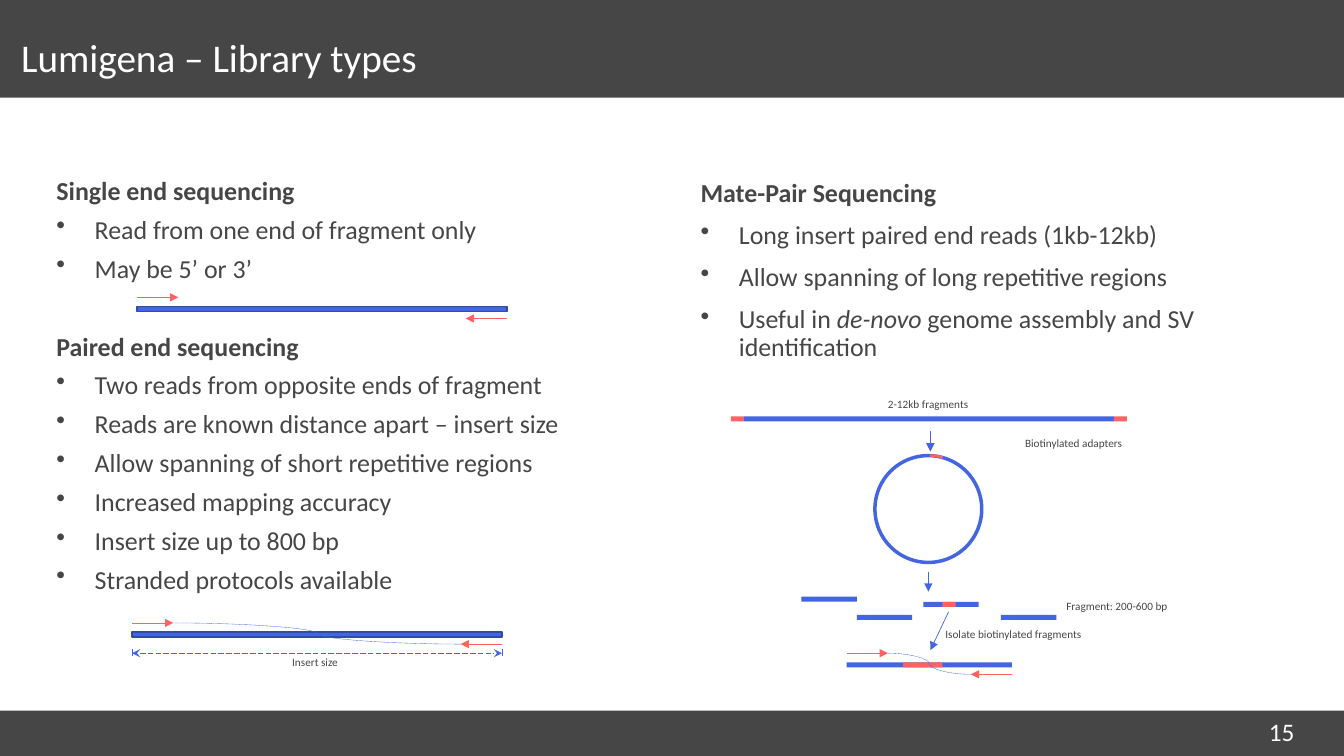
import pptx
import pptx.util
import pptx.dml.color
import pptx.enum.dml
import pptx.enum.shapes
import pptx.enum.text
import pptx.oxml.ns
from lxml import etree

# Content
TITLE, PAGE = "Lumigena – Library types", "15"
HEAD, ITEM = "head", "item"
LEFT = [
    (HEAD, "Single end sequencing"),
    (ITEM, "Read from one end of fragment only"),
    (ITEM, "May be 5’ or 3’"),
    (HEAD, "Paired end sequencing"),
    (ITEM, "Two reads from opposite ends of fragment"),
    (ITEM, "Reads are known distance apart – insert size"),
    (ITEM, "Allow spanning of short repetitive regions"),
    (ITEM, "Increased mapping accuracy"),
    (ITEM, "Insert size up to 800 bp"),
    (ITEM, "Stranded protocols available"),
]
RIGHT = [
    (HEAD, "Mate-Pair Sequencing"),
    (ITEM, "Long insert paired end reads (1kb-12kb)"),
    (ITEM, "Allow spanning of long repetitive regions"),
    (ITEM, "Useful in |de-novo| genome assembly and SV identification"),
]
# Labels: text, column, row, columns wide
LABELS = [
    ("Insert size", 28, 64.5, 6.9),
    ("2-12kb fragments", 87.1, 38.9, 10.1),
    ("Biotinylated adapters", 100.7, 42.8, 11.8),
    ("Fragment: 200-600 bp", 104.8, 59, 12.1),
    ("Isolate biotinylated fragments", 92.8, 61.7, 15.7),
]
PIECES = [(79.5, 59.2), (85, 61), (99.3, 61), (91.6, 59.7)]
STEPS = [(92.3, 42.8, 92.3, 44.8), (92.1, 56.7, 92.1, 58.7),
         (94.1, 60.7, 92.3, 64.5)]

# Grid: cells of a tenth of an inch
COLS, ROWS = 133.33, 75
THICK, READ, LONG, TAG = 0.5, 4.1, 36.7, 1.3
GREY, WHITE, BLUE, NAVY, RED = "464646", "FFFFFF", "4365E2", "324BA7", "FF6264"
KIND = pptx.enum.shapes.MSO_SHAPE
LINK = pptx.enum.shapes.MSO_CONNECTOR
DASH = pptx.enum.dml.MSO_LINE


def cell(n):
    return pptx.util.Inches(n / 10)


def tint(code):
    return pptx.dml.color.RGBColor.from_string(code)


def put(item, **vals):
    for name, val in vals.items():
        setattr(item, name, val)


def sub(node, tag, **vals):
    return etree.SubElement(node, pptx.oxml.ns.qn(tag), vals)


deck = pptx.Presentation()
put(deck, slide_width=cell(COLS), slide_height=cell(ROWS))
slide = deck.slides.add_slide(deck.slide_layouts[6])
shapes = slide.shapes


def draw(x, y, w, h, fill=None, line=None, width=1, kind=KIND.RECTANGLE):
    part = shapes.add_shape(kind, cell(x), cell(y), cell(w), cell(h))
    part.shadow.inherit = False
    if fill:
        part.fill.solid()
        part.fill.fore_color.rgb = tint(fill)
    else:
        part.fill.background()
    if line:
        part.line.color.rgb = tint(line)
        part.line.width = pptx.util.Pt(width)
    else:
        part.line.fill.background()


def link(x1, y1, x2, y2, code, width=0.5, dash=None, head=None, tail=None,
         kind=LINK.STRAIGHT):
    part = shapes.add_connector(kind, cell(x1), cell(y1), cell(x2), cell(y2))
    part.line.color.rgb = tint(code)
    put(part.line, width=pptx.util.Pt(width), dash_style=dash)
    edge = part.line._get_or_add_ln()
    for tag, tip in (("a:headEnd", head), ("a:tailEnd", tail)):
        if tip:
            sub(edge, tag, type=tip)
    sub(part._element.spPr, "a:effectLst")


def frame(x, y, w, h, side=1, wrap=True):
    text = shapes.add_textbox(cell(x), cell(y), cell(w), cell(h)).text_frame
    put(text, word_wrap=wrap, margin_left=cell(side), margin_right=cell(side),
        margin_top=cell(0.5), margin_bottom=cell(0.5))
    return text


def write(para, words, size, code=GREY, **style):
    run = para.add_run()
    run.text = words
    put(run.font, name="Calibri", size=pptx.util.Pt(size), **style)
    run.font.color.rgb = tint(code)


def body(x, h, lines, space):
    text = frame(x, 17.4, 58.2, h, side=0)
    for i, (role, words) in enumerate(lines):
        para = text.paragraphs[0] if i == 0 else text.add_paragraph()
        # A later heading leaves room for the drawing above it
        gap = 0 if i == 0 else 34 if role == HEAD else 6
        put(para, line_spacing=space, space_before=pptx.util.Pt(gap),
            space_after=pptx.util.Pt(4))
        if role == ITEM:
            props = para._p.get_or_add_pPr()
            props.set("marL", str(cell(3.8)))
            props.set("indent", str(-cell(3.8)))
            sub(sub(props, "a:buClr"), "a:srgbClr", val=GREY)
            sub(props, "a:buChar", char="•")
        for k, bit in enumerate(words.split("|")):
            write(para, bit, 18.5, bold=role == HEAD, italic=k % 2 == 1)


def reads(x, y, span, edge=None, curve=True, core=None):
    """A fragment with a read arrow at each end."""
    top, low, end = y - 0.9, y + 1.2, x + span
    draw(x, y, span, THICK, BLUE, edge)
    if core:
        draw(x + 5.6, y, core, THICK, RED)
    link(x, top, x + READ, top, RED, tail="triangle")
    link(end, low, end - READ, low, RED, tail="triangle")
    if curve:
        link(x + READ, top, end - READ, low, BLUE, 0.25, DASH.SQUARE_DOT,
             kind=LINK.CURVE)


# Bands, title and page number
draw(0, 0, COLS, 9.7, GREY)
draw(0, 70.5, COLS, 4.5, GREY)
name = frame(2.1, 2.3, 115.2, 7.5, side=0)
name.vertical_anchor = pptx.enum.text.MSO_ANCHOR.MIDDLE
name.paragraphs[0].line_spacing = 0.8
write(name.paragraphs[0], TITLE, 28, WHITE)
write(frame(124.9, 70.6, 7, 2.5).paragraphs[0], PAGE, 18, WHITE)

# Text columns
body(5.6, 46, LEFT, 0.8)
body(69.5, 20.3, RIGHT, 0.9)

# Single and paired end fragments
reads(13.6, 30.4, LONG, NAVY, curve=False)
reads(13.1, 62.7, LONG, NAVY)
for x in (13.1, 13.1 + LONG):
    link(x, 64.4, x, 65.1, BLUE)
link(13.1, 64.8, 13.1 + LONG, 64.8, BLUE, dash=DASH.LONG_DASH,
     head="stealth", tail="stealth")

# Mate pair: long fragment with adapters
draw(73.8, 41.3, LONG, THICK, BLUE)
for x in (73.8 - TAG, 73.8 + LONG):
    draw(x, 41.3, TAG, THICK, RED)

# Mate pair: circle, pieces and isolated fragment
draw(86.8, 45.2, 10.6, 10.6, WHITE, BLUE, 2.5, KIND.OVAL)
draw(91.1, 45.2, 2.4, THICK, None, RED, 2, KIND.ARC)
for x, y in PIECES:
    draw(x, y, 5.5, THICK, BLUE)
draw(93.5, 59.7, TAG, THICK, RED)
reads(84, 65.7, 16.4, core=3.9)
for step in STEPS:
    link(*step, BLUE, tail="triangle")

# Labels
for words, x, y, w in LABELS:
    write(frame(x, y, w, 2.4, wrap=False).paragraphs[0], words, 8)

deck.save("out.pptx")
